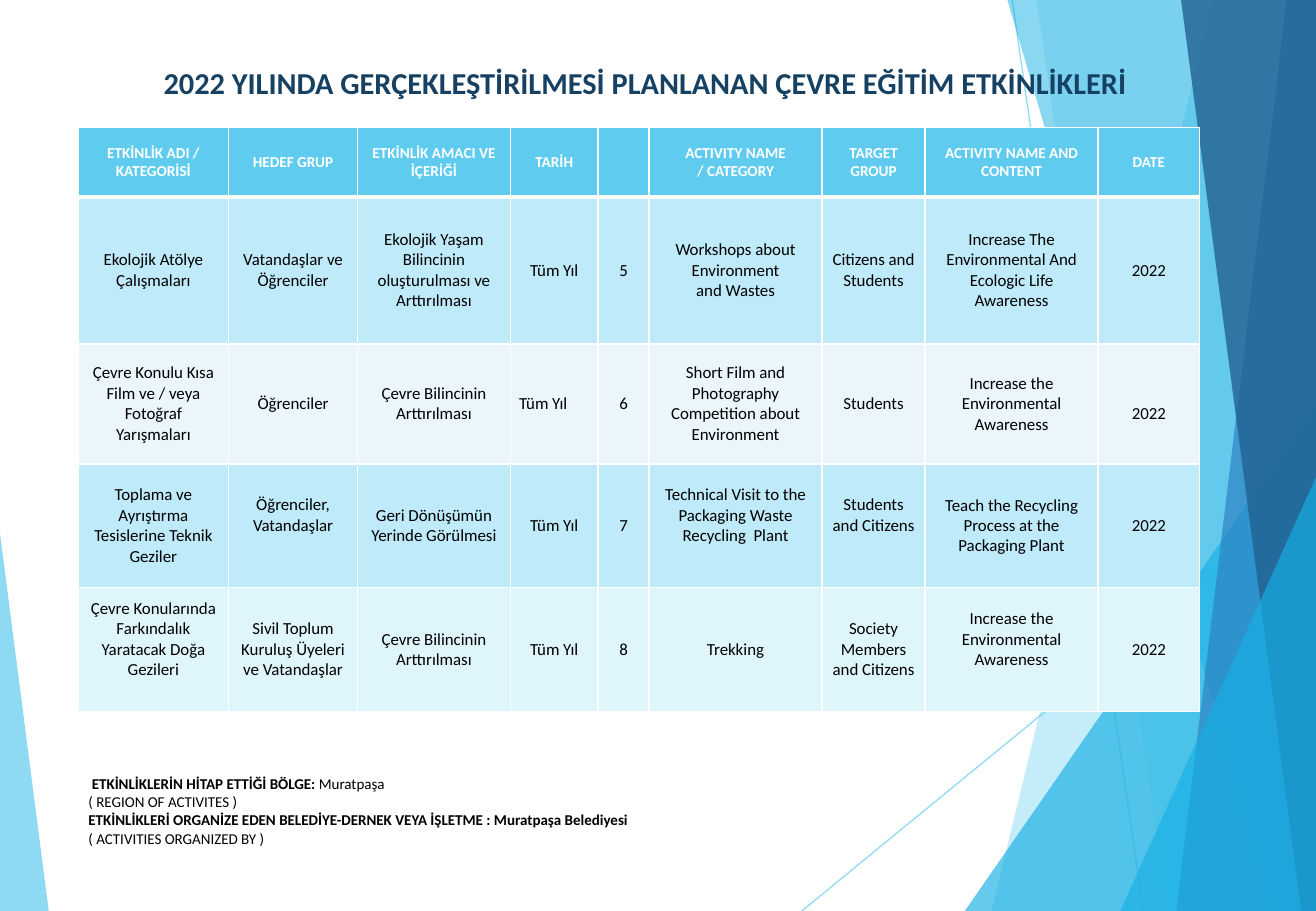
from dataclasses import dataclass

from lxml.etree import SubElement
from pptx import Presentation
from pptx.dml.color import RGBColor
from pptx.enum.shapes import MSO_CONNECTOR, MSO_SHAPE
from pptx.enum.text import MSO_ANCHOR, PP_ALIGN
from pptx.oxml.ns import qn
from pptx.slide import Slide
from pptx.table import _Cell
from pptx.util import Cm, Pt


@dataclass(frozen=True)
class Theme:
    font: str = "Calibri"
    sky: str = "5FCBEF"
    cyan: str = "17B0E4"
    blue: str = "2E83C3"
    navy: str = "226292"
    title: str = "174162"
    white: str = "FFFFFF"
    black: str = "000000"
    rows: tuple[str, ...] = ("5FCBEF", "BFEAF9", "EAF6FC", "BFEAF9", "DFF5FC")
    title_size: float = 18
    header_size: float = 9
    cell_size: float = 10
    note_size: float = 8.9


@dataclass(frozen=True)
class Ray:
    x1: float
    y1: float
    x2: float
    y2: float


@dataclass(frozen=True)
class Band:
    top: float
    bottom: float
    color: str
    alpha: int


@dataclass(frozen=True)
class Wedge:
    left: float
    top: float
    width: float
    peak: float
    color: str
    alpha: int


@dataclass(frozen=True)
class Run:
    text: str
    bold: bool = False


THEME = Theme()
WIDTH, HEIGHT = 27.51, 19.05
LINE = 0.43
MARGIN_X, MARGIN_Y = 0.18, 0.1

RAYS = (Ray(21.16, 0, 23.9, HEIGHT), Ray(WIDTH, 10.24, 16.76, HEIGHT))
PANES = (
    Band(25.35, 20.73, THEME.sky, 36),
    Band(21.67, 24.41, THEME.sky, 20),
    Wedge(20.17, 8.46, 7.34, 1, THEME.cyan, 66),
    Band(21.06, 26.64, THEME.cyan, 50),
    Band(26.9, 24.59, THEME.blue, 70),
    Band(24.69, 27.2, THEME.navy, 80),
    Wedge(23.42, 9.98, 4.09, 1, THEME.cyan, 66),
    Wedge(0, 11.15, 1.02, 0, THEME.sky, 70),
)

TITLE = "2022 YILINDA GERÇEKLEŞTİRİLMESİ PLANLANAN ÇEVRE EĞİTİM ETKİNLİKLERİ"
COLUMNS = (3.15, 2.69, 3.2, 1.83, 1.07, 3.61, 2.16, 3.61, 2.13)
ROWS = (1.45, 3.07, 2.51, 2.59, 2.59)
ACTIVITIES = (
    ("ETKİNLİK ADI / KATEGORİSİ", "HEDEF GRUP", "ETKİNLİK AMACI VE İÇERİĞİ", "TARİH", "",
     "ACTIVITY NAME\n/ CATEGORY", "TARGET GROUP", "ACTIVITY NAME AND CONTENT", "DATE"),
    ("Ekolojik Atölye Çalışmaları", "Vatandaşlar ve Öğrenciler",
     "Ekolojik Yaşam Bilincinin oluşturulması ve Arttırılması", "Tüm Yıl", "5",
     "Workshops about Environment\nand Wastes", "Citizens and Students",
     "Increase The Environmental And Ecologic Life Awareness", "2022"),
    ("Çevre Konulu Kısa Film ve / veya Fotoğraf Yarışmaları", "Öğrenciler",
     "Çevre Bilincinin Arttırılması", "Tüm Yıl", "6",
     "Short Film and Photography Competition about Environment", "Students",
     "Increase the Environmental Awareness", "2022"),
    ("Toplama ve Ayrıştırma Tesislerine Teknik Geziler", "Öğrenciler, Vatandaşlar",
     "Geri Dönüşümün Yerinde Görülmesi", "Tüm Yıl", "7",
     "Technical Visit to the Packaging Waste Recycling  Plant", "Students and Citizens",
     "Teach the Recycling Process at the Packaging Plant", "2022"),
    ("Çevre Konularında Farkındalık Yaratacak Doğa Gezileri",
     "Sivil Toplum Kuruluş Üyeleri ve Vatandaşlar", "Çevre Bilincinin Arttırılması",
     "Tüm Yıl", "8", "Trekking", "Society Members and Citizens",
     "Increase the Environmental Awareness", "2022"),
)
RAISED = {(3, 1), (3, 5), (3, 6), (4, 0), (4, 7)}
LOWERED = {(2, 8)}
LEFT_ALIGNED = {(2, 3)}
NOTES = (
    (Run(" "), Run("ETKİNLİKLERİN HİTAP ETTİĞİ BÖLGE: ", True), Run("Muratpaşa")),
    (Run("( REGION OF ACTIVITES )"),),
    (Run("ETKİNLİKLERİ ORGANİZE EDEN BELEDİYE-DERNEK VEYA İŞLETME : Muratpaşa Belediyesi", True),),
    (Run("( ACTIVITIES ORGANIZED BY )"),),
)


def rgb(color: str) -> RGBColor:
    return RGBColor.from_string(color)


def set_font(font, size: float, color: str, bold: bool | None = None) -> None:
    font.name, font.size, font.bold = THEME.font, Pt(size), bold
    font.color.rgb = rgb(color)


def set_alpha(sp, percent: int) -> None:
    for color in sp.element.spPr.iter(qn("a:srgbClr")):
        SubElement(color, qn("a:alpha"), val=str(percent * 1000))


def draw_ray(slide: Slide, ray: Ray) -> None:
    sp = slide.shapes.add_connector(
        MSO_CONNECTOR.STRAIGHT, Cm(ray.x1), Cm(ray.y1), Cm(ray.x2), Cm(ray.y2))
    sp.line.color.rgb = rgb(THEME.sky)
    sp.line.width = Pt(0.75)
    set_alpha(sp, 70)
    SubElement(sp.element.spPr, qn("a:effectLst"))


def draw_pane(slide: Slide, pane: Band | Wedge) -> None:
    if isinstance(pane, Band):
        builder = slide.shapes.build_freeform(Cm(pane.top), 0)
        corners = ((WIDTH, 0), (WIDTH, HEIGHT), (pane.bottom, HEIGHT))
        builder.add_line_segments([(Cm(x), Cm(y)) for x, y in corners], close=True)
        sp = builder.convert_to_shape()
    else:
        sp = slide.shapes.add_shape(
            MSO_SHAPE.ISOSCELES_TRIANGLE, Cm(pane.left), Cm(pane.top),
            Cm(pane.width), Cm(HEIGHT - pane.top))
        sp.adjustments[0] = pane.peak
    sp.shadow.inherit = False
    sp.fill.solid()
    sp.fill.fore_color.rgb = rgb(pane.color)
    sp.line.fill.background()
    set_alpha(sp, pane.alpha)


def draw_title(slide: Slide) -> None:
    sp = slide.shapes.title
    sp.element.getparent().append(sp.element)
    sp.left, sp.top, sp.width, sp.height = Cm(2.9), Cm(1.22), Cm(21.18), Cm(1)
    tf = sp.text_frame
    tf.text = TITLE
    tf.vertical_anchor = MSO_ANCHOR.MIDDLE
    p = tf.paragraphs[0]
    p.alignment = PP_ALIGN.CENTER
    set_font(p.font, THEME.title_size, THEME.title, True)


def set_borders(cell: _Cell, top: float, bottom: float) -> None:
    tc_pr = cell._tc.get_or_add_tcPr()
    for side, width in (("L", 1), ("R", 1), ("T", top), ("B", bottom)):
        ln = SubElement(tc_pr, qn(f"a:ln{side}"), w=str(Pt(width)))
        SubElement(SubElement(ln, qn("a:solidFill")), qn("a:srgbClr"), val=THEME.white)


def fill_cell(cell: _Cell, row: int, col: int) -> None:
    header = row == 0
    cell.text = ACTIVITIES[row][col]
    cell.vertical_anchor = MSO_ANCHOR.MIDDLE
    cell.margin_left = cell.margin_right = Cm(MARGIN_X)
    cell.margin_top = Cm(MARGIN_Y + LINE * ((row, col) in LOWERED))
    cell.margin_bottom = Cm(MARGIN_Y + LINE * ((row, col) in RAISED))
    set_borders(cell, 3 if row == 1 else 1, 3 if header else 1)
    cell.fill.solid()
    cell.fill.fore_color.rgb = rgb(THEME.rows[row])
    for p in cell.text_frame.paragraphs:
        p.alignment = PP_ALIGN.LEFT if (row, col) in LEFT_ALIGNED else PP_ALIGN.CENTER
        set_font(p.font, THEME.header_size if header else THEME.cell_size,
                 THEME.white if header else THEME.black, header)


def draw_table(slide: Slide) -> None:
    table = slide.shapes.add_table(
        len(ROWS), len(COLUMNS), Cm(1.63), Cm(2.67), Cm(sum(COLUMNS)), Cm(sum(ROWS))).table
    table.horz_banding = False
    for column, width in zip(table.columns, COLUMNS):
        column.width = Cm(width)
    for row, height in enumerate(ROWS):
        table.rows[row].height = Cm(height)
        for col in range(len(COLUMNS)):
            fill_cell(table.cell(row, col), row, col)


def draw_notes(slide: Slide) -> None:
    tf = slide.shapes.add_textbox(Cm(1.6), Cm(16.08), Cm(20.14), Cm(1.78)).text_frame
    tf.word_wrap = True
    for i, runs in enumerate(NOTES):
        p = tf.add_paragraph() if i else tf.paragraphs[0]
        set_font(p.font, THEME.note_size, THEME.black)
        for run in runs:
            r = p.add_run()
            r.text, r.font.bold = run.text, run.bold


def main() -> None:
    prs = Presentation()
    prs.slide_width, prs.slide_height = Cm(WIDTH), Cm(HEIGHT)
    slide = prs.slides.add_slide(prs.slide_layouts[5])
    for ray in RAYS:
        draw_ray(slide, ray)
    for pane in PANES:
        draw_pane(slide, pane)
    draw_title(slide)
    draw_table(slide)
    draw_notes(slide)
    prs.save("out.pptx")


if __name__ == "__main__":
    main()
